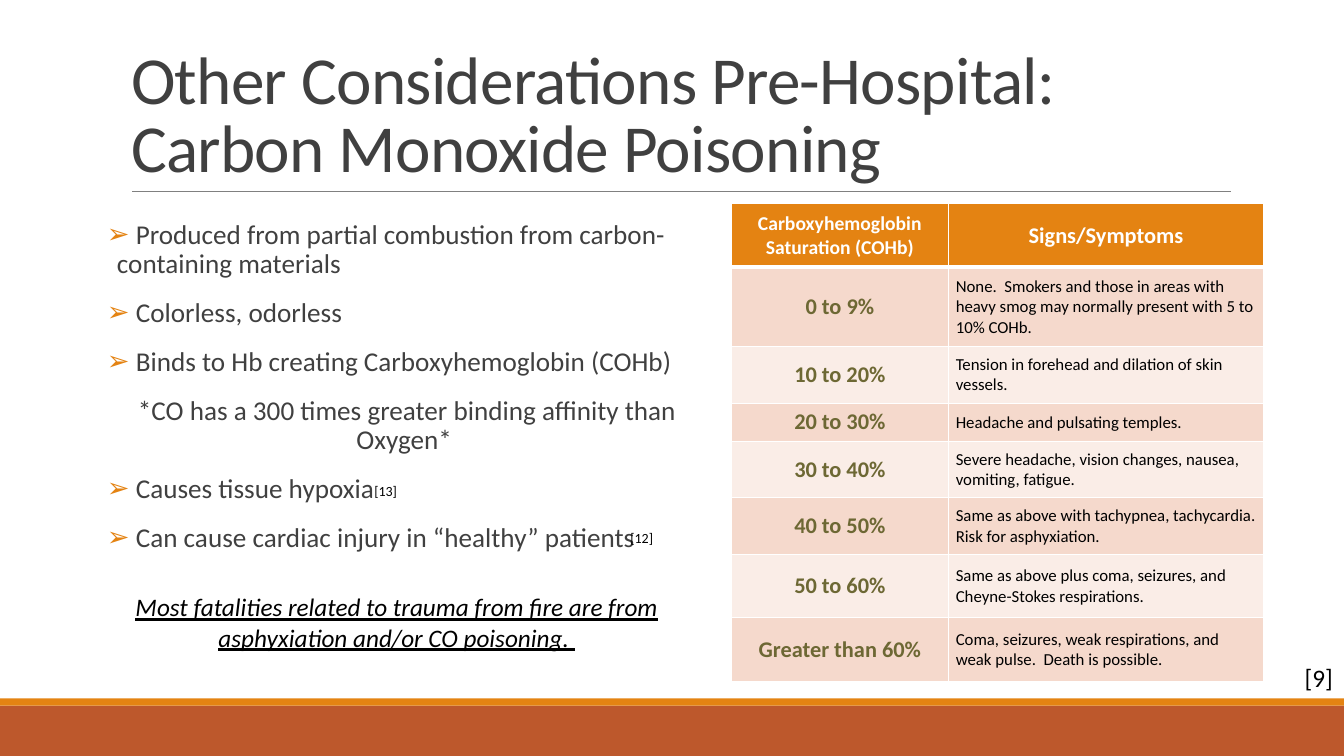
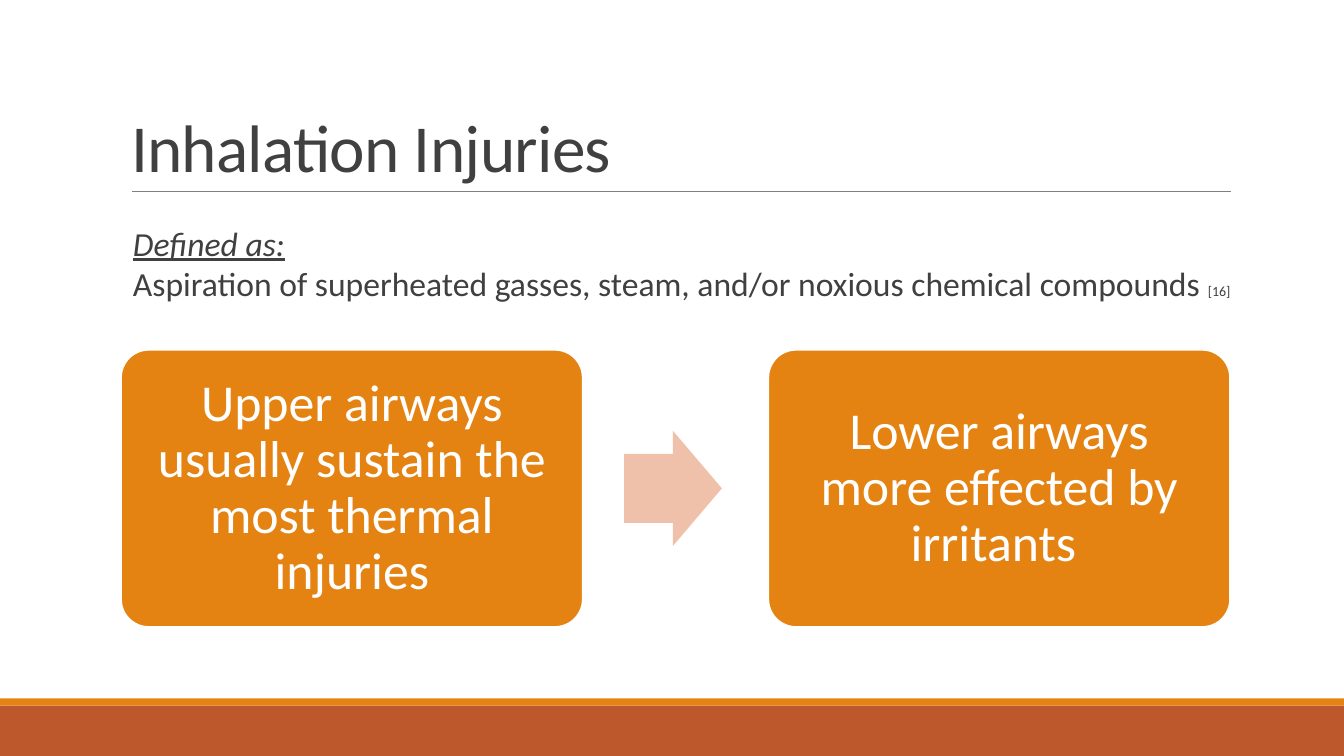
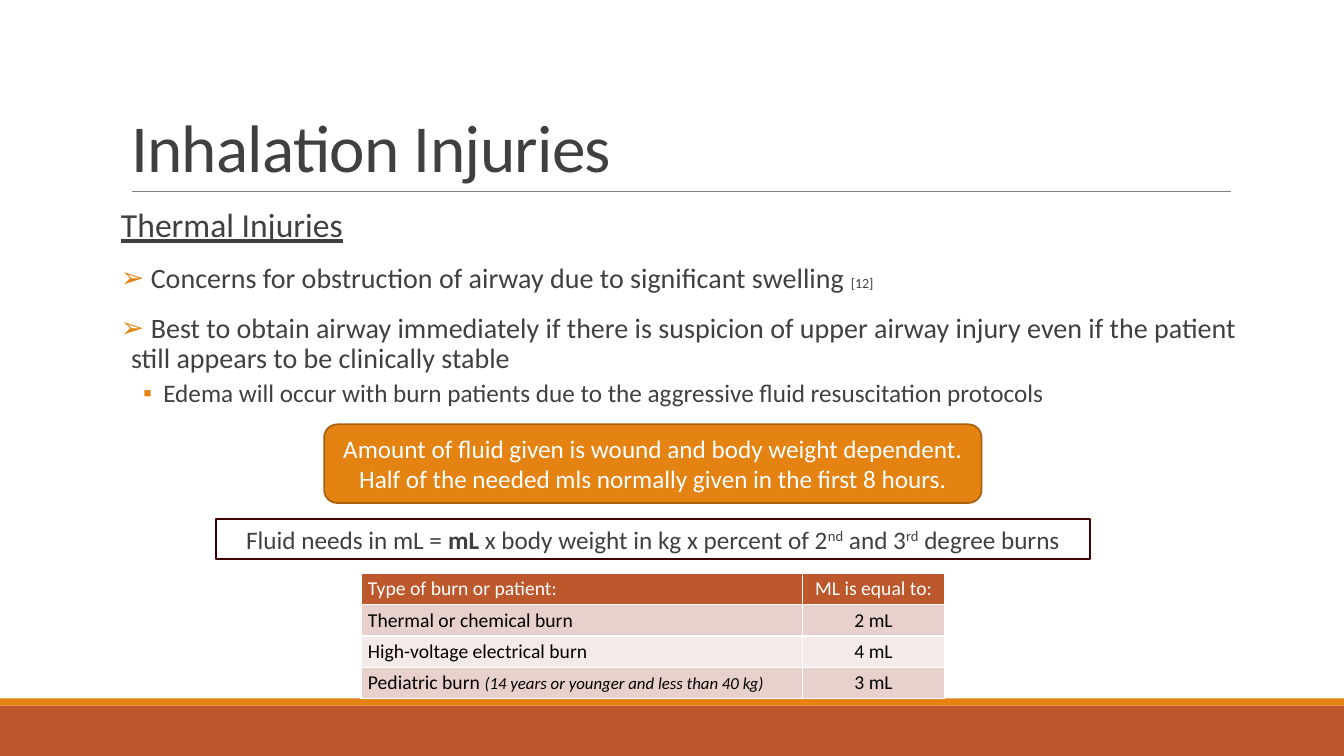
from collections import namedtuple

from lxml.etree import SubElement
from pptx import Presentation
from pptx.dml.color import RGBColor
from pptx.enum.shapes import MSO_CONNECTOR, MSO_SHAPE
from pptx.enum.text import MSO_ANCHOR, MSO_AUTO_SIZE, PP_ALIGN
from pptx.oxml.ns import qn
from pptx.util import Inches, Pt

FONT = "Calibri"
ORANGE, RUST, PEACH = "E48312", "BD582C", "EFC1AB"
TEXT, OLIVE, RULE = "404040", "6D6834", "808080"
WHITE, BLACK = "FFFFFF", "000000"
LEFT, CENTER = PP_ALIGN.LEFT, PP_ALIGN.CENTER

Box = namedtuple("Box", "left top width height")
TITLE_BOX = Box(1.2, 0.31, 11, 1.59)


def rgb(value):
    return RGBColor.from_string(value)


def inches(box):
    return [Inches(length) for length in box]


def move(shape, box):
    shape.left, shape.top, shape.width, shape.height = inches(box)


def write(para, text, size=18, color=TEXT, bold=False, italic=False,
          underline=False, raised=0, spacing=0):
    """Add a run; raised is a percentage, spacing is in points."""
    span = para.add_run()
    span.text = text
    font = span.font
    font.name, font.size = FONT, Pt(size)
    font.bold, font.italic, font.underline = bold, italic, underline
    font.color.rgb = rgb(color)
    properties = span._r.get_or_add_rPr()
    if raised:
        properties.set("baseline", str(raised * 1000))
    if spacing:
        properties.set("spc", str(round(spacing * 100)))


def add_para(frame, spans, align=LEFT, line=1.0, before=0, after=0):
    """Add a paragraph of (text, format) spans, filling an empty first one."""
    para = frame.paragraphs[0]
    if para.runs:
        para = frame.add_paragraph()
    para.alignment, para.line_spacing = align, line
    para.space_before, para.space_after = Pt(before), Pt(after)
    for text, style in spans:
        write(para, text, **style)
    return para


def set_bullet(para, char=None, left=0.0, hang=0.0):
    properties = para._p.get_or_add_pPr()
    properties.set("marL", str(Inches(left)))
    properties.set("indent", str(-Inches(hang)))
    if char:
        color = SubElement(properties, qn("a:buClr"))
        SubElement(color, qn("a:srgbClr"), val=ORANGE)
        SubElement(properties, qn("a:buFont"), typeface="Arial")
        SubElement(properties, qn("a:buChar"), char=char)
    else:
        SubElement(properties, qn("a:buNone"))


def add_item(frame, spans, bullet="➢", align=LEFT):
    para = add_para(frame, spans, align, line=0.9, before=12, after=2)
    if bullet:
        set_bullet(para, bullet, left=0.1, hang=0.1)
    else:
        set_bullet(para)


def add_subitem(frame, spans):
    para = add_para(frame, spans, line=0.9, before=2, after=4)
    para.level = 1
    set_bullet(para, "▪", left=0.42, hang=0.2)


def add_shape(page, kind, box, fill=None, line=None, weight=1.25):
    shape = page.shapes.add_shape(kind, *inches(box))
    shape.shadow.inherit = False
    if fill:
        shape.fill.solid()
        shape.fill.fore_color.rgb = rgb(fill)
    else:
        shape.fill.background()
    if line:
        shape.line.color.rgb = rgb(line)
        shape.line.width = Pt(weight)
    else:
        shape.line.fill.background()
    shape.text_frame.word_wrap = True
    shape.text_frame.vertical_anchor = MSO_ANCHOR.MIDDLE
    return shape


def add_text(page, box, text, **style):
    frame = page.shapes.add_textbox(*inches(box)).text_frame
    frame.word_wrap = True
    add_para(frame, [(text, style)], CENTER)


def set_borders(cell, weights):
    properties = cell._tc.get_or_add_tcPr()
    for side, weight in weights.items():
        border = SubElement(properties, qn(f"a:ln{side}"), w=str(Pt(weight)))
        fill = SubElement(border, qn("a:solidFill"))
        SubElement(fill, qn("a:srgbClr"), val=WHITE)


def add_grid(page, box, widths, heights, rows, header_fill, bands,
             header_aligns, aligns, header_line=1):
    """Add a table whose cells are lists of (text, format) spans."""
    table = page.shapes.add_table(len(rows), len(widths), *inches(box)).table
    for column, width in zip(table.columns, widths):
        column.width = Inches(width)
    for index, (row, height, cells) in enumerate(zip(table.rows, heights, rows)):
        row.height = Inches(height)
        header = index == 0
        for cell, spans, align in zip(row.cells, cells,
                                      header_aligns if header else aligns):
            borders = {"L": 1, "R": 1, "B": 1}
            if header:
                borders = {"L": 1, "R": 1, "T": 1, "B": header_line}
            set_borders(cell, borders)
            cell.fill.solid()
            cell.fill.fore_color.rgb = rgb(
                header_fill if header else bands[(index - 1) % 2])
            cell.margin_left = cell.margin_right = Inches(0.07)
            cell.margin_top = cell.margin_bottom = Inches(0.03)
            cell.vertical_anchor = MSO_ANCHOR.MIDDLE
            add_para(cell.text_frame, spans, align)


def dress_master(deck, page):
    """Draw the bands and title rule, then hand them to the slide master."""
    rule = page.shapes.add_connector(
        MSO_CONNECTOR.STRAIGHT, *inches((1.31, 1.9, 12.21, 1.9)))
    rule.line.color.rgb = rgb(RULE)
    rule.line.width = Pt(0.5)
    SubElement(rule.element.spPr, qn("a:effectLst"))
    bands = [
        add_shape(page, MSO_SHAPE.RECTANGLE, Box(0, 7, 13.33, 0.5), RUST),
        add_shape(page, MSO_SHAPE.RECTANGLE, Box(0, 6.93, 13.33, 0.07), ORANGE),
    ]
    tree = deck.slide_master.shapes.element
    for place, shape in enumerate([*bands, rule], start=2):
        tree.insert(place, shape.element)


def add_page(deck, layout_name, title):
    page = deck.slides.add_slide(deck.slide_layouts.get_by_name(layout_name))
    move(page.shapes.title, TITLE_BOX)
    frame = page.shapes.title.text_frame
    frame.word_wrap, frame.auto_size = True, MSO_AUTO_SIZE.NONE
    frame.vertical_anchor = MSO_ANCHOR.BOTTOM
    add_para(frame, [(title, {"size": 48, "spacing": -0.5})], line=0.85)
    return page


def open_body(page, box):
    body = page.placeholders[1]
    move(body, box)
    frame = body.text_frame
    frame.word_wrap, frame.auto_size = True, MSO_AUTO_SIZE.NONE
    frame.vertical_anchor = MSO_ANCHOR.TOP
    frame.margin_left = frame.margin_right = 0
    return frame


def poisoning_facts(page, box):
    frame = open_body(page, box)
    style = {"size": 19.4}
    for text, bullet, align in [
        (" Produced from partial combustion from carbon-containing materials", "➢", LEFT),
        (" Colorless, odorless", "➢", LEFT),
        (" Binds to Hb creating Carboxyhemoglobin (COHb)", "➢", LEFT),
        (" *CO has a 300 times greater binding affinity than Oxygen*", None, CENTER),
        (" Causes tissue hypoxia", "➢", LEFT),
        (" Can cause cardiac injury in “healthy” patients", "➢", LEFT),
    ]:
        add_item(frame, [(text, style)], bullet, align)
    add_text(page, Box(box.left + 0.14, box.top + 3.68, 5.47, 0.71),
             "Most fatalities related to trauma from fire are from "
             "asphyxiation and/or CO poisoning. ",
             color=BLACK, italic=True, underline=True)
    for text, right, down in [("[13]", 2.46, 2.6), ("[12]", 5, 3.06)]:
        add_text(page, Box(box.left + right, box.top + down, 0.61, 0.27),
                 text, size=10, color=BLACK)


def saturation_table(page, box):
    label = {"size": 16, "color": OLIVE, "bold": True}
    sign = {"size": 12, "color": BLACK}
    header = {"color": WHITE, "bold": True}
    rows = [[[("Carboxyhemoglobin Saturation (COHb)", {"size": 14, **header})],
             [("Signs/Symptoms", {"size": 16, **header})]]]
    rows += [[[(level, label)], [(signs, sign)]] for level, signs in [
        ("0 to 9%", "None.  Smokers and those in areas with heavy smog may "
                    "normally present with 5 to 10% COHb."),
        ("10 to 20%", "Tension in forehead and dilation of skin vessels."),
        ("20 to 30%", "Headache and pulsating temples."),
        ("30 to 40%", "Severe headache, vision changes, nausea, vomiting, fatigue."),
        ("40 to 50%", "Same as above with tachypnea, tachycardia. Risk for asphyxiation."),
        ("50 to 60%", "Same as above plus coma, seizures, and Cheyne-Stokes respirations."),
        ("Greater than 60%", "Coma, seizures, weak respirations, and weak pulse.  "
                             "Death is possible."),
    ]]
    add_grid(page, box, [2.16, box.width - 2.16],
             [0.63, 0.79, 0.56, 0.38, 0.56, 0.56, 0.63, 0.63], rows,
             ORANGE, ["F5D9CC", "FAEDE7"], [CENTER, CENTER], [CENTER, LEFT],
             header_line=3)


def airway_definition(page, box):
    frame = page.shapes.add_textbox(*inches(box)).text_frame
    frame.word_wrap = True
    add_para(frame, [("Defined as:", {"size": 24, "italic": True, "underline": True})])
    add_para(frame, [
        ("Aspiration of superheated gasses, steam, and/or noxious chemical compounds ",
         {"size": 24}),
        ("[16]", {"size": 10}),
    ])


def airway_flow(page, box):
    """Place two equal cards at the ends of the box with an arrow between."""
    card_width, gap, arrow_width, arrow_height = 4.58, 0.41, 0.97, 1.14
    for left, text in [
        (box.left, "Upper airways usually sustain the most thermal injuries"),
        (box.left + box.width - card_width, "Lower airways more effected by irritants "),
    ]:
        card = add_shape(page, MSO_SHAPE.ROUNDED_RECTANGLE,
                         Box(left, box.top, card_width, box.height), ORANGE, WHITE)
        card.adjustments[0] = 0.1
        frame = card.text_frame
        frame.margin_left = frame.margin_right = Inches(0.15)
        add_para(frame, [(text, {"size": 37, "color": WHITE})], CENTER, line=0.9)
    arrow = add_shape(
        page, MSO_SHAPE.RIGHT_ARROW,
        Box(box.left + card_width + gap, box.top + (box.height - arrow_height) / 2,
            arrow_width, arrow_height), PEACH)
    arrow.adjustments[0], arrow.adjustments[1] = 0.6, 0.5


def thermal_facts(page, box):
    frame = open_body(page, box)
    add_item(frame, [("Thermal Injuries", {"size": 24, "underline": True})], bullet=None)
    add_item(frame, [
        (" Concerns for obstruction of airway due to significant swelling ", {"size": 20}),
        ("[12]", {"size": 10}),
    ])
    add_item(frame, [(" Best to obtain airway immediately if there is suspicion of upper "
                      "airway injury even if the patient still appears to be clinically "
                      "stable", {"size": 20})])
    add_subitem(frame, [("Edema will occur with burn patients due to the aggressive "
                         "fluid resuscitation protocols", {})])


def fluid_panel(page, box):
    """Stack the callout, the formula and the burn table, all centred."""
    def row(width, down, height):
        return Box(box.left + (box.width - width) / 2, box.top + down, width, height)

    callout = add_shape(page, MSO_SHAPE.ROUNDED_RECTANGLE, row(6.52, 0, 0.78),
                        ORANGE, "A9610D")
    for text in ["Amount of fluid given is wound and body weight dependent.",
                 "Half of the needed mls normally given in the first 8 hours."]:
        add_para(callout.text_frame, [(text, {"color": WHITE})], CENTER)

    formula = add_shape(page, MSO_SHAPE.RECTANGLE, row(box.width, 0.94, 0.4),
                        line="400000", weight=1.5)
    add_para(formula.text_frame, [
        ("Fluid needs in mL = ", {}),
        ("mL", {"bold": True}),
        (" x body weight in kg x percent of 2", {}),
        ("nd", {"raised": 30}),
        (" and 3", {}),
        ("rd", {"raised": 30}),
        (" degree burns", {}),
    ], CENTER)

    header = {"size": 14, "color": WHITE}
    entry = {"size": 14, "color": BLACK}
    note = {"size": 12, "color": BLACK, "italic": True}
    rows = [
        [[("Type of burn or patient:", header)], [("ML is equal to:", header)]],
        [[("Thermal or chemical burn", entry)], [("2 mL", entry)]],
        [[("High-voltage electrical burn", entry)], [("4 mL", entry)]],
        [[("Pediatric burn ", entry),
          ("(14 years or younger and less than 40 kg)", note)], [("3 mL", entry)]],
    ]
    add_grid(page, row(5.79, 1.48, 1.24), [4.38, 1.41], [0.31] * len(rows), rows,
             RUST, ["E8D1CD", "F4EAE8"], [LEFT, CENTER], [LEFT, CENTER])


def main():
    deck = Presentation()
    deck.slide_width, deck.slide_height = Inches(13.33), Inches(7.5)

    page = add_page(deck, "Title and Content",
                    "Other Considerations Pre-Hospital: Carbon Monoxide Poisoning")
    dress_master(deck, page)
    poisoning_facts(page, Box(1.06, 2.14, 5.9, 4.19))
    saturation_table(page, Box(7.25, 2.02, 5.28, 4.74))
    add_text(page, Box(12.83, 6.52, 0.5, 0.4), "[9]", color=BLACK)

    page = add_page(deck, "Title Only", "Inhalation Injuries")
    airway_flow(page, Box(1.2, 3.47, 11, 2.75))
    airway_definition(page, Box(1.22, 2.16, 11.35, 0.91))

    page = add_page(deck, "Title and Content", "Inhalation Injuries")
    thermal_facts(page, Box(1.2, 2.02, 11.41, 2.09))
    fluid_panel(page, Box(2.14, 4.21, 8.67, 2.72))

    deck.save("out.pptx")


if __name__ == "__main__":
    main()
